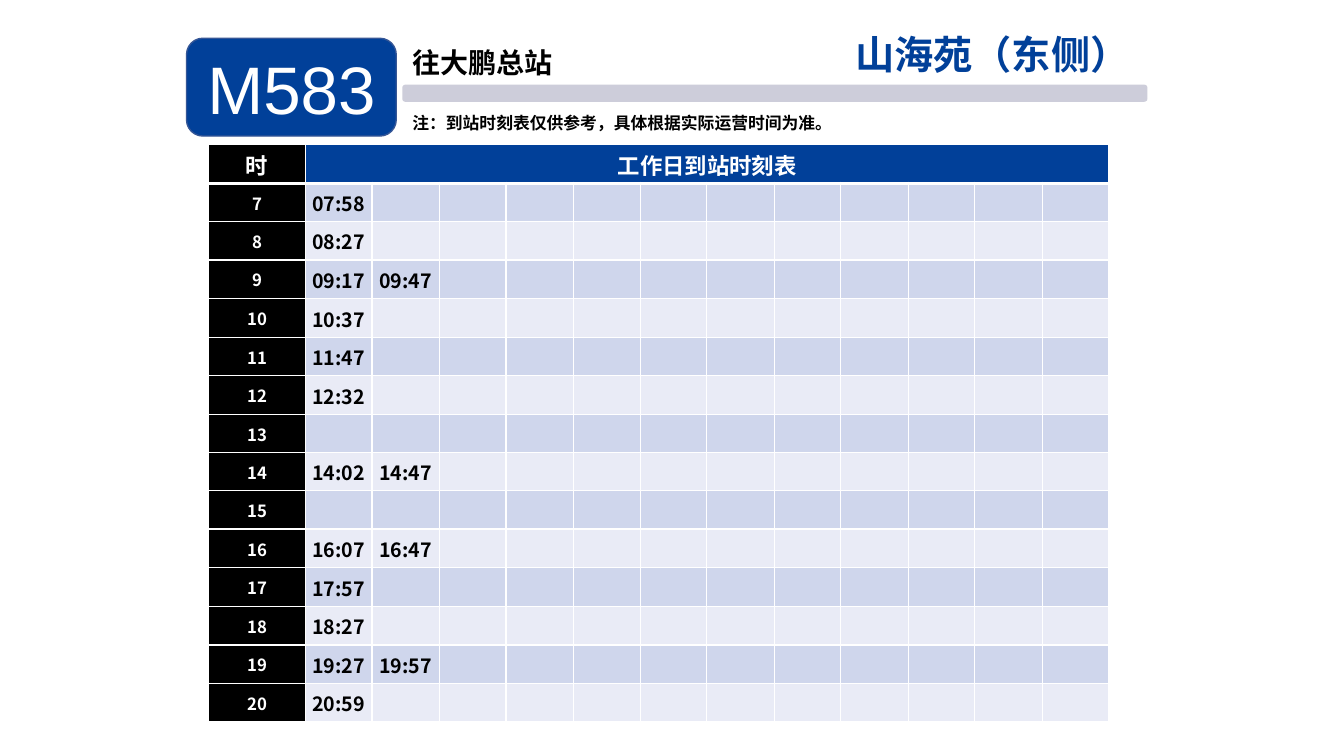
from lxml import etree
from pptx import Presentation
from pptx import util as u
from pptx.dml.color import RGBColor
from pptx.enum import shapes, text
from pptx.oxml import ns

PX = 9144  # 100 px to the inch
CJK, LATIN = "Noto Sans CJK SC", "Arial"
BLUE, BLACK, WHITE = "014099", "000000", "FFFFFF"
BANDS = ["CFD6EC", "E9EBF6"]
TIME_COLUMNS = 12
DEPARTURES = {
    7: ["07:58"], 8: ["08:27"], 9: ["09:17", "09:47"], 10: ["10:37"],
    11: ["11:47"], 12: ["12:32"], 13: [], 14: ["14:02", "14:47"], 15: [],
    16: ["16:07", "16:47"], 17: ["17:57"], 18: ["18:27"],
    19: ["19:27", "19:57"], 20: ["20:59"],
}


def px(*lengths):
    return [u.Emu(length * PX) for length in lengths]


def color(hex_string):
    return RGBColor.from_string(hex_string)


def add_run(paragraph, words, size, hex_color, font=CJK, bold=True):
    run = paragraph.add_run()
    run.text = words
    run.font.size = u.Pt(size)
    run.font.bold = bold
    run.font.name = font
    run.font.color.rgb = color(hex_color)
    east_asian = etree.SubElement(run.font._element, ns.qn("a:ea"))
    east_asian.set("typeface", CJK)


def set_margins(holder, left, top, right, bottom):
    (holder.margin_left, holder.margin_top,
     holder.margin_right, holder.margin_bottom) = px(left, top, right, bottom)


def add_rounded(slide, box, fill):
    rounded = slide.shapes.add_shape(shapes.MSO_SHAPE.ROUNDED_RECTANGLE, *px(*box))
    rounded.shadow.inherit = False
    rounded.fill.solid()
    rounded.fill.fore_color.rgb = color(fill)
    rounded.line.fill.background()
    return rounded


def add_label(slide, box, words, size, hex_color, font=CJK, margins=(0, 1, 0, 0),
              align=text.PP_ALIGN.LEFT, space_before=0):
    frame = slide.shapes.add_textbox(*px(*box)).text_frame
    frame.word_wrap = True
    set_margins(frame, *margins)
    paragraph = frame.paragraphs[0]
    paragraph.alignment = align
    paragraph.space_before = u.Pt(space_before)
    add_run(paragraph, words, size, hex_color, font)


def add_route_badge(slide, box):
    badge = add_rounded(slide, box, BLUE)
    badge.line.color.rgb = color("355696")
    badge.line.width = u.Pt(1)
    frame = badge.text_frame
    frame.vertical_anchor = text.MSO_ANCHOR.MIDDLE
    frame.paragraphs[0].alignment = text.PP_ALIGN.CENTER
    add_run(frame.paragraphs[0], "M583", 48, WHITE, LATIN, bold=False)


def add_header(slide, left, top, width):
    """Route badge, divider bar, direction, note and stop name."""
    bar_left = left + 214
    bar = add_rounded(slide, (bar_left, top + 59, width - 214, 17), "CDCDDA")
    bar.adjustments[0] = 0.18
    add_label(slide, (bar_left + 10, top + 19, 343, 35), "往大鹏总站", 20, BLACK,
              space_before=1)
    add_label(slide, (bar_left + 10, top + 86, 450, 22),
              "注：到站时刻表仅供参考，具体根据实际运营时间为准。", 12, BLACK,
              space_before=1)
    add_label(slide, (left + width - 363, top, 355, 55), "山海苑（东侧）", 28, BLUE,
              LATIN, margins=(10, 5, 10, 5), align=text.PP_ALIGN.RIGHT)
    add_route_badge(slide, (left, top + 13, 208, 97))


def set_borders(cell, bottom_width):
    properties = cell._tc.get_or_add_tcPr()
    for side, width in zip("LRTB", (1, 1, 1, bottom_width)):
        line = etree.SubElement(properties, ns.qn("a:ln" + side), w=str(u.Pt(width)))
        solid = etree.SubElement(line, ns.qn("a:solidFill"))
        etree.SubElement(solid, ns.qn("a:srgbClr"), val=WHITE)


def fill_cell(cell, words, size, hex_color, fill, bottom_width=1):
    set_borders(cell, bottom_width)
    cell.fill.solid()
    cell.fill.fore_color.rgb = color(fill)
    set_margins(cell, 1, 1, 1, 0)
    cell.vertical_anchor = text.MSO_ANCHOR.MIDDLE
    paragraph = cell.text_frame.paragraphs[0]
    paragraph.alignment = text.PP_ALIGN.CENTER
    if words:
        add_run(paragraph, words, size, hex_color)


def share(items, total):
    """Whole-pixel sizes of equal parts that add up to the total."""
    edges = [round(total * i / items) for i in range(items + 1)]
    return [end - start for start, end in zip(edges, edges[1:])]


def add_timetable(slide, box):
    left, top, width, height = box
    hour_width, heading_height = 96, 39
    table = slide.shapes.add_table(len(DEPARTURES) + 1, TIME_COLUMNS + 1,
                                   *px(*box)).table
    widths = [hour_width] + share(TIME_COLUMNS, width - hour_width)
    heights = [heading_height] + share(len(DEPARTURES), height - heading_height)
    for column, size in zip(table.columns, px(*widths)):
        column.width = size
    for row, size in zip(table.rows, px(*heights)):
        row.height = size

    headings = ["时", "工作日到站时刻表"] + [""] * (TIME_COLUMNS - 1)
    for column, heading in enumerate(headings):
        fill_cell(table.cell(0, column), heading, 16, WHITE,
                  BLUE if column else BLACK, bottom_width=3)
    table.cell(0, 1).merge(table.cell(0, TIME_COLUMNS))

    for row, (hour, times) in enumerate(DEPARTURES.items(), start=1):
        fill_cell(table.cell(row, 0), str(hour), 12, WHITE, BLACK,)
        padded = times + [""] * (TIME_COLUMNS - len(times))
        for column, time in enumerate(padded, start=1):
            fill_cell(table.cell(row, column), time, 14, BLACK, BANDS[(row - 1) % 2])


def main():
    deck = Presentation()
    deck.slide_width, deck.slide_height = px(1333, 750)
    slide = deck.slides.add_slide(deck.slide_layouts[6])
    add_header(slide, 185, 25, 953)
    add_timetable(slide, (207, 143, 893, 573))
    deck.save("out.pptx")


if __name__ == "__main__":
    main()
